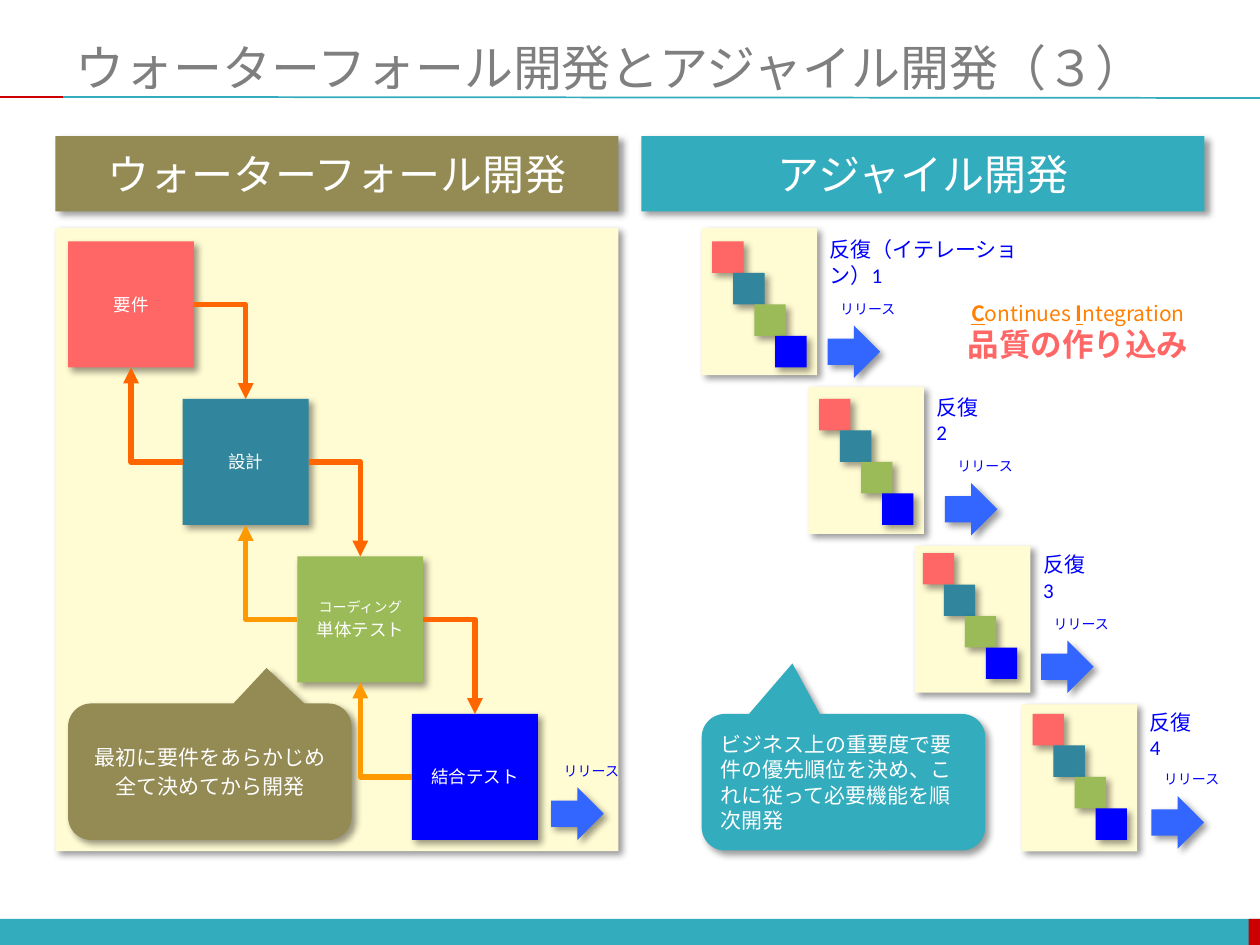
from lxml import etree
from pptx import Presentation
from pptx.dml.color import RGBColor
from pptx.enum import shapes, text
from pptx.oxml import ns
from pptx.util import Pt

TEAL = RGBColor(0x33, 0xAC, 0xBD)
RED = RGBColor(0xCC, 0x00, 0x00)
OLIVE = RGBColor(0x94, 0x8A, 0x54)
CREAM = RGBColor(0xFF, 0xFB, 0xD2)
CORAL = RGBColor(0xFF, 0x66, 0x66)
PETROL = RGBColor(0x31, 0x85, 0x9C)
GREEN = RGBColor(0x9B, 0xBB, 0x59)
BLUE = RGBColor(0x00, 0x00, 0xFF)
ARROW_BLUE = RGBColor(0x33, 0x66, 0xFF)
ORANGE = RGBColor(0xFF, 0x66, 0x00)
AMBER = RGBColor(0xFF, 0x99, 0x00)
CI_ORANGE = RGBColor(0xFF, 0x80, 0x00)
GREY = RGBColor(0x7F, 0x7F, 0x7F)
WHITE = RGBColor(0xFF, 0xFF, 0xFF)

SANS, CJK, ARIAL = "Calibri", "Noto Sans CJK JP", "Arial"
KIND = shapes.MSO_SHAPE
CENTER, LEFT = text.PP_ALIGN.CENTER, text.PP_ALIGN.LEFT

TITLE = "ウォーターフォール開発とアジャイル開発（３）"
HEADERS = [("アジャイル開発", 366.5, TEAL), ("ウォーターフォール開発", 31.7, OLIVE)]
# Each phase: colour, font, lines of (wording, size)
PHASES = [
    (CORAL, ARIAL, [("要件", 10)]),
    (PETROL, SANS, [("設計", 10)]),
    (GREEN, SANS, [("コーディング", 8), ("単体テスト", 10)]),
    (BLUE, ARIAL, [("結合テスト", 10)]),
]
BACK_COLORS = [ORANGE, AMBER, AMBER]
RELEASE = "リリース"
# Each iteration: label, label width, first small square, release arrow
ITERATIONS = [
    ("反復（イテレーション）1", 128.9, (407, 138), (473, 186)),
    ("反復 2", 45, (468, 228), (540, 276)),
    ("反復 3", 45, (527.3, 316), (595, 366)),
    ("反復 4", 45, (590, 408), (658, 455)),
]
WATERFALL_NOTE = ["最初に要件をあらかじめ", "全て決めてから開発"]
AGILE_NOTE = ["ビジネス上の重要度で要件の優先順位を決め、これに従って必要機能を順次開発"]
# Each span: wording, size, colour, bold, underline
INTEGRATION = [
    [("C", 12, CI_ORANGE, True, True), ("ontinues ", 12, CI_ORANGE, False, False),
     ("I", 12, CI_ORANGE, True, True), ("ntegration", 12, CI_ORANGE, False, False)],
    [("品質の作り込み", 18, CORAL, True, False)],
]

PHASE_X, PHASE_Y, PHASE_SIZE = 38.9, 138, 72
PHASE_DX, PHASE_DY = 65.5, 90
CARD_X, CARD_Y, CARD_DX, CARD_DY = 401, 130.4, 60.96, 90.7
SQUARE, SQUARE_DX = 18, 12

deck = Presentation()
deck.slide_width, deck.slide_height = Pt(720), Pt(540)
page = deck.slides.add_slide(deck.slide_layouts[5])


def add_child(parent, tag, **attributes):
    return etree.SubElement(parent, ns.qn(tag), **attributes)


def add_span(para, wording, size, color, font, bold=False, underline=False):
    span = para.add_run()
    span.text = wording
    span.font.size, span.font.name = Pt(size), font
    span.font.bold, span.font.underline = bold, underline
    span.font.color.rgb = color
    add_child(span.font._element, "a:ea", typeface=CJK)


def write(box, lines, font, color=WHITE, align=CENTER, gap=0.0, wrap=True):
    """Fill a box with lines of (wording, size); gap is a share of the size."""
    frame = box.text_frame
    frame.word_wrap = wrap
    for i, (wording, size) in enumerate(lines):
        para = frame.add_paragraph() if i else frame.paragraphs[0]
        para.alignment = align
        if i:
            para.space_before = Pt(size * gap)
        add_span(para, wording, size, color, font)


def add_block(kind, x, y, w, h, color, shadow=True, adjust=()):
    block = page.shapes.add_shape(kind, Pt(x), Pt(y), Pt(w), Pt(h))
    block.shadow.inherit = False
    block.fill.solid()
    block.fill.fore_color.rgb = color
    block.line.fill.background()
    block.text_frame.vertical_anchor = text.MSO_ANCHOR.MIDDLE
    for i, value in enumerate(adjust):
        block.adjustments[i] = value
    if shadow:
        effects = block._element.spPr.find(ns.qn("a:effectLst"))
        outer = add_child(effects, "a:outerShdw", blurRad=str(Pt(4)), dist=str(Pt(3)),
                          dir="2700000", algn="tl", rotWithShape="0")
        add_child(add_child(outer, "a:srgbClr", val="000000"), "a:alpha", val="40000")
    return block


def add_line(x1, y1, x2, y2, color, width):
    line = page.shapes.add_connector(shapes.MSO_CONNECTOR.STRAIGHT,
                                     Pt(x1), Pt(y1), Pt(x2), Pt(y2))
    line.line.color.rgb = color
    line.line.width = Pt(width)
    add_child(line._element.spPr, "a:effectLst")
    return line


def add_bent_arrow(x, y, w, h, color, reverse=False):
    """Arrow right then down; reversed, it runs left then up."""
    arrow = add_line(x, y, x + w, y + h, color, 3)
    properties = arrow._element.spPr
    properties.find(ns.qn("a:prstGeom")).set("prst", "bentConnector2")
    if reverse:
        properties.find(ns.qn("a:xfrm")).set("rot", "10800000")
    add_child(properties.find(ns.qn("a:ln")), "a:tailEnd", type="triangle")


def add_label(x, y, w, h, wording, size, wrap):
    box = page.shapes.add_textbox(Pt(x), Pt(y), Pt(w), Pt(h))
    write(box, [(wording, size)], SANS, BLUE, LEFT, wrap=wrap)


def add_release(x, y):
    add_block(KIND.RIGHT_ARROW, x, y, 30, 30, ARROW_BLUE)
    add_label(x, y - 18, 46.5, 17, RELEASE, 8, False)


# Frame of the page and title
add_block(KIND.RECTANGLE, 0, 525, 720, 15.5, TEAL, shadow=False)
add_block(KIND.RECTANGLE, 713.5, 525, 6.5, 15.5, RED, shadow=False)
add_line(36, 55.4, 720, 56, TEAL, 1)
add_line(0, 55.4, 36, 55.4, RED, 1)

title = page.shapes.title
title.left, title.top, title.width, title.height = Pt(36), Pt(21.6), Pt(684), Pt(33)
title.text_frame.vertical_anchor = text.MSO_ANCHOR.MIDDLE
write(title, [(TITLE, 28)], CJK, GREY, LEFT)

for wording, x, color in HEADERS:
    header = add_block(KIND.RECTANGLE, x, 77.8, 321.8, 43, color)
    write(header, [(wording, 24)], SANS)

# Waterfall side
add_block(KIND.RECTANGLE, 31.7, CARD_Y, 321.8, 356, CREAM)
note = add_block(KIND.ROUNDED_RECTANGULAR_CALLOUT, 38.9, 402, 162, 78, OLIVE,
                 adjust=(0.2, -0.76, 0.17))
write(note, [(line, 12) for line in WATERFALL_NOTE], SANS, gap=0.2)

corners = [(PHASE_X + i * PHASE_DX, PHASE_Y + i * PHASE_DY) for i in range(len(PHASES))]
for (x, y), (color, font, lines) in zip(corners, PHASES):
    phase = add_block(KIND.RECTANGLE, x, y, PHASE_SIZE, PHASE_SIZE, color)
    write(phase, lines, font, gap=0.2)

half = PHASE_SIZE / 2
for (x, y), back_color in zip(corners, BACK_COLORS):
    bend = (PHASE_DX - half, PHASE_DY - half)
    add_bent_arrow(x + PHASE_SIZE, y + half, *bend, ORANGE)
    add_bent_arrow(x + half, y + PHASE_SIZE, *bend, back_color, reverse=True)
add_release(315, 450)

# Agile side
for i, (label, label_width, (x, y), release) in enumerate(ITERATIONS):
    card_x, card_y = CARD_X + i * CARD_DX, CARD_Y + i * CARD_DY
    add_block(KIND.RECTANGLE, card_x, card_y, 66, 84, CREAM)
    for step, (color, _, _) in enumerate(PHASES):
        add_block(KIND.RECTANGLE, x + step * SQUARE_DX, y + step * SQUARE,
                  SQUARE, SQUARE, color)
    add_label(467 + i * 61, 131.8 + i * 90, label_width, 21.8, label, 12, True)
    add_release(*release)

note = add_block(KIND.ROUNDED_RECTANGULAR_CALLOUT, 401, 408, 162, 78, TEAL,
                 adjust=(-0.18, -0.87, 0.17))
write(note, [(line, 12) for line in AGILE_NOTE], SANS, align=LEFT)

box = page.shapes.add_textbox(Pt(544), Pt(168), Pt(144), Pt(44))
box.text_frame.word_wrap = False
for i, spans in enumerate(INTEGRATION):
    para = box.text_frame.add_paragraph() if i else box.text_frame.paragraphs[0]
    para.alignment = CENTER
    for wording, size, color, bold, underline in spans:
        add_span(para, wording, size, color, CJK, bold, underline)

deck.save("out.pptx")
